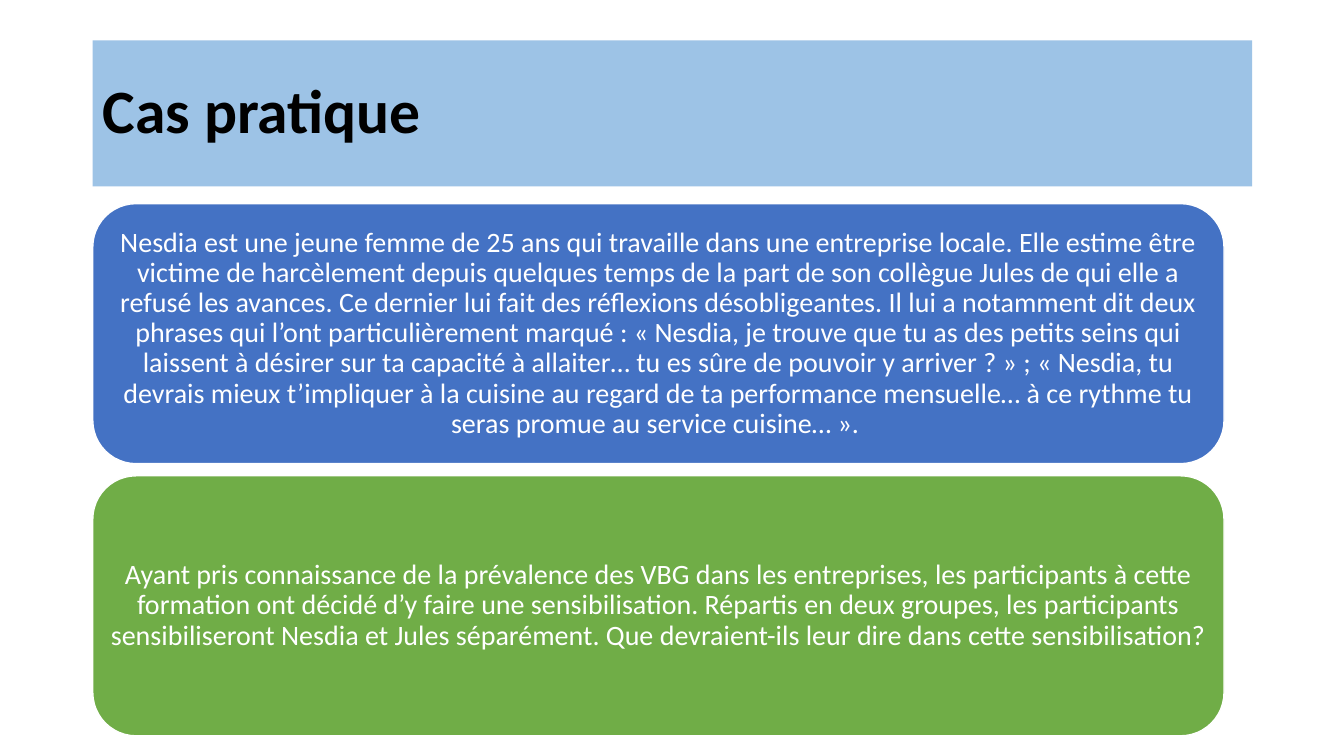
from dataclasses import dataclass

from pptx import Presentation
from pptx.dml.color import RGBColor
from pptx.enum import shapes, text
from pptx.util import Inches, Pt


@dataclass(frozen=True)
class Theme:
    font: str = "Calibri"
    sky: str = "9DC3E6"
    blue: str = "4472C4"
    green: str = "70AD47"
    white: str = "FFFFFF"
    black: str = "000000"
    head: int = 44
    body: int = 20


THEME = Theme()
LEFT = 0.92

STORY = (
    "Nesdia est une jeune femme de 25 ans qui travaille dans une entreprise locale. "
    "Elle estime être victime de harcèlement depuis quelques temps de la part de son "
    "collègue Jules de qui elle a refusé les avances. Ce dernier lui fait des réflexions "
    "désobligeantes. Il lui a notamment dit deux phrases qui l’ont particulièrement "
    "marqué : « Nesdia, je trouve que tu as des petits seins qui laissent à désirer sur "
    "ta capacité à allaiter… tu es sûre de pouvoir y arriver ? » ; « Nesdia, tu devrais "
    "mieux t’impliquer à la cuisine au regard de ta performance mensuelle… à ce rythme "
    "tu seras promue au service cuisine… ». "
)
TASK = (
    "Ayant pris connaissance de la prévalence des VBG dans les entreprises, les "
    "participants à cette formation ont décidé d’y faire une sensibilisation. Répartis "
    "en deux groupes, les participants sensibiliseront Nesdia et Jules séparément. Que "
    "devraient-ils leur dire dans cette sensibilisation?"
)


def add_box(slide, kind, top, width, height, fill):
    box = slide.shapes.add_shape(
        kind, Inches(LEFT), Inches(top), Inches(width), Inches(height))
    box.shadow.inherit = False
    box.fill.solid()
    box.fill.fore_color.rgb = RGBColor.from_string(fill)
    return box


def set_text(box, words, size, color, align, bold=False):
    frame = box.text_frame
    frame.word_wrap = True
    frame.vertical_anchor = text.MSO_ANCHOR.MIDDLE
    para = frame.paragraphs[0]
    para.text = words
    para.alignment = align
    para.line_spacing = 0.9
    para.font.name = THEME.font
    para.font.size = Pt(size)
    para.font.bold = bold
    para.font.color.rgb = RGBColor.from_string(color)


def add_title(slide, words):
    bar = add_box(slide, shapes.MSO_SHAPE.RECTANGLE, 0.4, 11.5, 1.45, THEME.sky)
    bar.line.fill.background()
    set_text(bar, words, THEME.head, THEME.black, text.PP_ALIGN.LEFT, bold=True)


def add_card(slide, top, words, fill):
    card = add_box(
        slide, shapes.MSO_SHAPE.ROUNDED_RECTANGLE, top, 11.22, 2.58, fill)
    card.line.color.rgb = RGBColor.from_string(THEME.white)
    card.line.width = Pt(1)
    # The rounded corners already keep the text off the edges
    frame = card.text_frame
    frame.margin_left = frame.margin_right = Inches(0)
    set_text(card, words, THEME.body, THEME.white, text.PP_ALIGN.CENTER)


def main():
    deck = Presentation()
    deck.slide_width, deck.slide_height = Inches(13.33), Inches(7.5)
    slide = deck.slides.add_slide(deck.slide_layouts[6])

    # Title bar
    add_title(slide, "Cas pratique")

    # Stacked cards: the case, then the task
    cards = [(STORY, THEME.blue), (TASK, THEME.green)]
    for row, (words, fill) in enumerate(cards):
        add_card(slide, 2.02 + row * 2.7, words, fill)

    deck.save("out.pptx")


if __name__ == "__main__":
    main()
